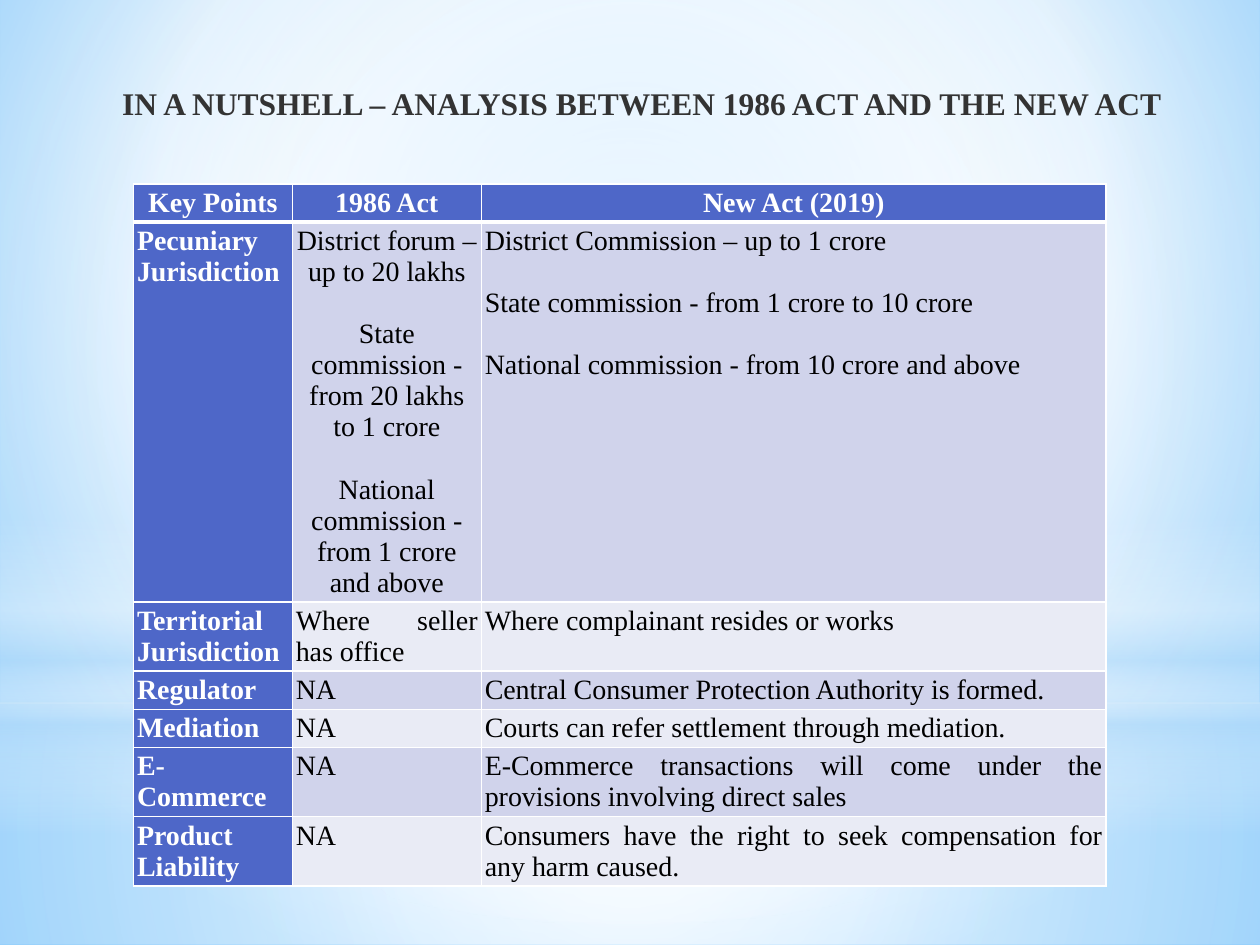
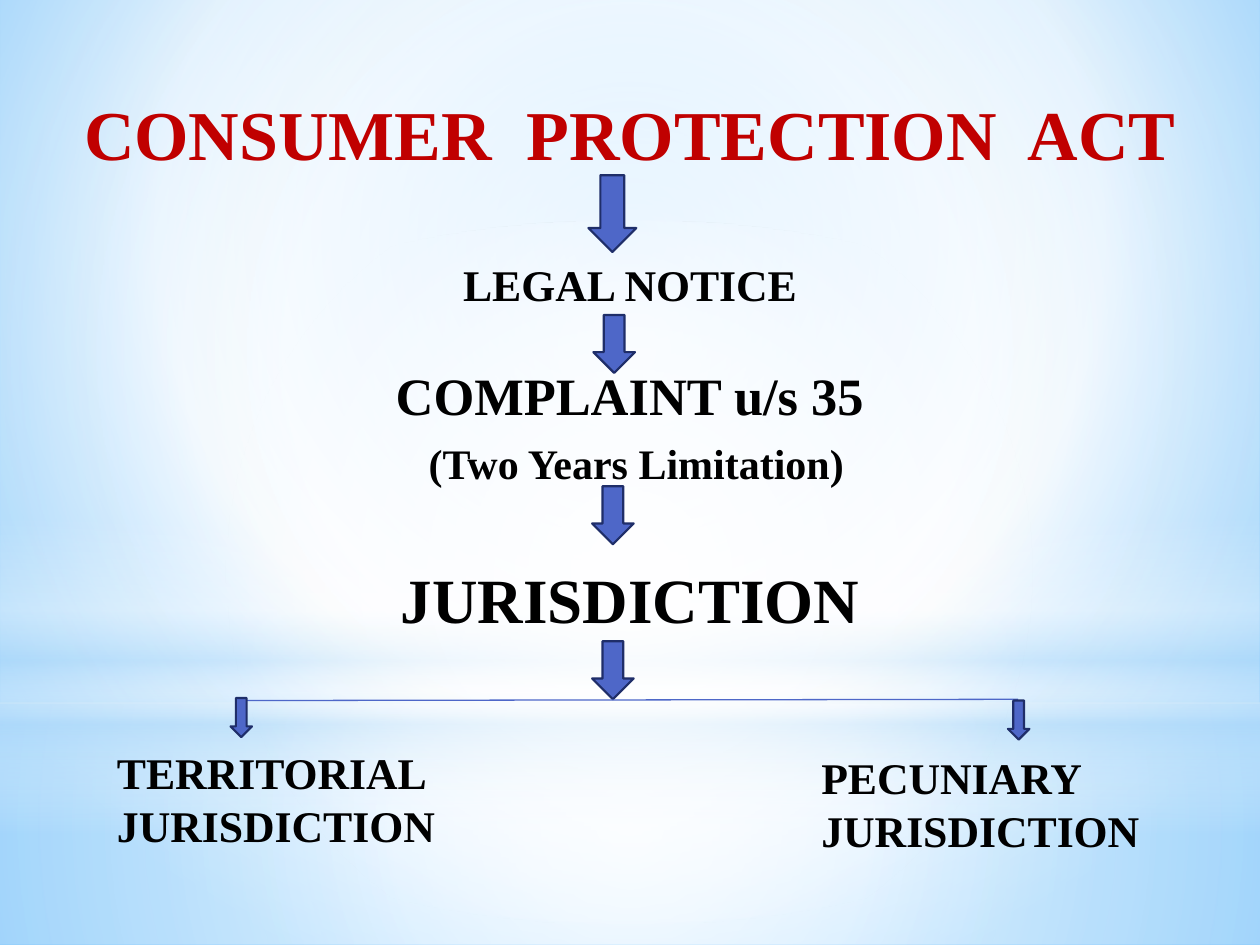
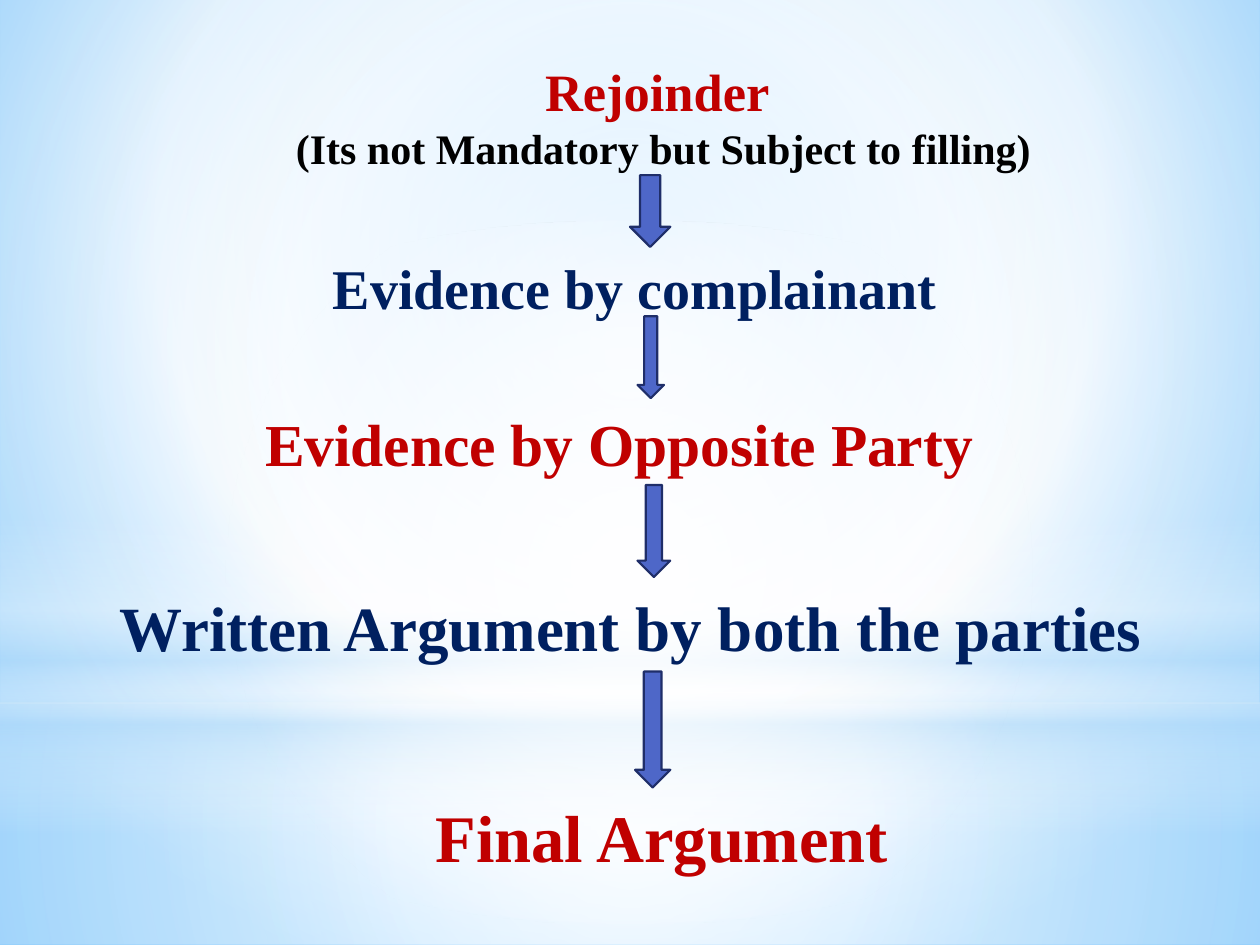
from lxml import etree
from pptx import Presentation
from pptx.dml.color import RGBColor
from pptx.enum.shapes import MSO_CONNECTOR, MSO_SHAPE
from pptx.enum.text import MSO_ANCHOR, MSO_AUTO_SIZE, PP_ALIGN
from pptx.oxml.ns import qn
from pptx.util import Inches, Pt

RECTANGLE, OVAL, DOWN_ARROW = MSO_SHAPE.RECTANGLE, MSO_SHAPE.OVAL, MSO_SHAPE.DOWN_ARROW
STRAIGHT = MSO_CONNECTOR.STRAIGHT
TOP, MIDDLE = MSO_ANCHOR.TOP, MSO_ANCHOR.MIDDLE
LEFT, CENTER, JUSTIFY = PP_ALIGN.LEFT, PP_ALIGN.CENTER, PP_ALIGN.JUSTIFY
NO_AUTOFIT = MSO_AUTO_SIZE.NONE

FONT = "Times New Roman"
BLACK = RGBColor(0x00, 0x00, 0x00)
WHITE = RGBColor(0xFF, 0xFF, 0xFF)
CHARCOAL = RGBColor(0x33, 0x33, 0x33)
RED = RGBColor(0xC0, 0x00, 0x00)
NAVY = RGBColor(0x00, 0x20, 0x60)
BLUE = RGBColor(0x4E, 0x67, 0xC8)
DARK_BLUE = RGBColor(0x1F, 0x2E, 0x69)
BAND_DARK = RGBColor(0xD0, 0xD3, 0xEB)
BAND_LIGHT = RGBColor(0xE9, 0xEB, 0xF5)
SKY = RGBColor(0x9E, 0xD5, 0xFF)
DEEP_SKY = RGBColor(0x5B, 0xB9, 0xFF)
PALE_SKY = RGBColor(0xB4, 0xDC, 0xFA)

# Gradient stops: position, colour, opacity (all in percent)
BACKGROUND_STOPS = [(0, SKY, 100), (60, WHITE, 100), (100, DEEP_SKY, 100)]
CENTRE = (50, 50, 50, 50)
BACKDROP = [
    (RECTANGLE, (0, 5.58, 10, 1.92), CENTRE,
     [(0, WHITE, 91), (37, WHITE, 76), (100, PALE_SKY, 79)]),
    (RECTANGLE, (0, 0, 10, 5.58), CENTRE,
     [(0, WHITE, 89), (48, WHITE, 62), (100, PALE_SKY, 79)]),
    (RECTANGLE, (0, 4.12, 10, 2.5), None,
     [(0, WHITE, 0), (29, WHITE, 30), (45, PALE_SKY, 40),
      (55, WHITE, 26), (65, PALE_SKY, 60), (100, WHITE, 0)]),
    (OVAL, (0, 1.75, 10, 5.58), CENTRE, [(0, WHITE, 100), (56, WHITE, 0)]),
]

COLUMN_WIDTHS = [1.26, 1.5, 4.96]
ROW_HEIGHTS = [0.29, 3.01, 0.54, 0.3, 0.3, 0.54, 0.54]
COMPARISON = [
    ["Key Points", "1986 Act", "New Act (2019)"],
    ["Pecuniary Jurisdiction",
     "District forum – up to 20 lakhs\n"
     "State commission - from 20 lakhs to 1 crore\n"
     "National commission - from 1 crore and above",
     "District Commission – up to 1 crore\n"
     "State commission - from 1 crore to 10 crore\n"
     "National commission - from 10 crore and above"],
    ["Territorial Jurisdiction", "Where seller has office",
     "Where complainant resides or works"],
    ["Regulator", "NA", "Central Consumer Protection Authority is formed."],
    ["Mediation", "NA", "Courts can refer settlement through mediation."],
    ["E-Commerce", "NA",
     "E-Commerce transactions will come under the provisions involving direct sales"],
    ["Product Liability", "NA",
     "Consumers have the right to seek compensation for any harm caused."],
]


def inches(box):
    return [Inches(value) for value in box]


# Shared look
def set_gradient(fill, holder, stops, focus):
    """Give fill these stops, round a focus box or, without one, top to bottom."""
    fill.gradient()
    gradient = holder.find(".//" + qn("a:gradFill"))
    for child in list(gradient):
        gradient.remove(child)
    stop_list = etree.SubElement(gradient, qn("a:gsLst"))
    for position, color, opacity in stops:
        stop = etree.SubElement(stop_list, qn("a:gs"), pos=str(position * 1000))
        tint = etree.SubElement(stop, qn("a:srgbClr"), val=str(color))
        if opacity < 100:
            etree.SubElement(tint, qn("a:alpha"), val=str(opacity * 1000))
    if focus:
        circle = etree.SubElement(gradient, qn("a:path"), path="circle")
        sides = {side: str(share * 1000) for side, share in zip("ltrb", focus)}
        etree.SubElement(circle, qn("a:fillToRect"), **sides)
    else:
        etree.SubElement(gradient, qn("a:lin"), ang="5400000", scaled="0")


def build_master(master, page):
    """Draw the backdrop on a page and move it to the back of the master."""
    set_gradient(master.background.fill, master.element, BACKGROUND_STOPS, (20, 10, 20, 60))
    for index, (kind, box, focus, stops) in enumerate(BACKDROP):
        glow = page.shapes.add_shape(kind, *inches(box))
        glow.shadow.inherit = False
        glow.line.fill.background()
        set_gradient(glow.fill, glow._element, stops, focus)
        glow._element.nvSpPr.cNvPr.set("id", str(100 + index))
        master.shapes._spTree.insert(2 + index, glow._element)


def write(frame, lines, align=CENTER, gap=0, bold=True):
    """Write (text, size, color) lines, with a gap in points between them."""
    for index, (text, size, color) in enumerate(lines):
        para = frame.add_paragraph() if index else frame.paragraphs[0]
        look = {"alignment": align, "line_spacing": 1.0,
                "space_before": Pt(gap if index else 0)}
        for name, value in look.items():
            setattr(para, name, value)
        span = para.add_run()
        span.text = text
        span.font.color.rgb = color
        for name, value in {"name": FONT, "size": Pt(size), "bold": bold}.items():
            setattr(span.font, name, value)


def add_title(page, box, lines, anchor=TOP, wrap=True):
    title = page.shapes.title
    for name, value in zip(("left", "top", "width", "height"), inches(box)):
        setattr(title, name, value)
    frame = title.text_frame
    for name, value in {"auto_size": NO_AUTOFIT, "vertical_anchor": anchor,
                        "word_wrap": wrap}.items():
        setattr(frame, name, value)
    write(frame, lines)


def add_label(page, box, text, size, color=BLACK, align=CENTER):
    frame = page.shapes.add_textbox(*inches(box)).text_frame
    frame.word_wrap = True
    write(frame, [(text, size, color)], align)


def add_arrow(page, box):
    arrow = page.shapes.add_shape(DOWN_ARROW, *inches(box))
    arrow.shadow.inherit = False
    arrow.fill.solid()
    arrow.fill.fore_color.rgb = BLUE
    arrow.line.color.rgb = DARK_BLUE
    arrow.line.width = Pt(1.25)


# Comparison table
def set_borders(cell, **widths):
    properties = cell._tc.get_or_add_tcPr()
    for index, side in enumerate("LRTB"):
        edge = etree.Element(qn("a:ln" + side), w=str(Pt(widths.get(side, 1))))
        paint = etree.SubElement(edge, qn("a:solidFill"))
        etree.SubElement(paint, qn("a:srgbClr"), val=str(WHITE))
        properties.insert(index, edge)


def add_comparison(page, left, top):
    box = (left, top, sum(COLUMN_WIDTHS), sum(ROW_HEIGHTS))
    table = page.shapes.add_table(len(ROW_HEIGHTS), len(COLUMN_WIDTHS), *inches(box)).table
    table.first_row = table.horz_banding = False
    for column, width in zip(table.columns, COLUMN_WIDTHS):
        column.width = Inches(width)
    for row, height in zip(table.rows, ROW_HEIGHTS):
        row.height = Inches(height)
    for r, texts in enumerate(COMPARISON):
        for c, text in enumerate(texts):
            cell = table.cell(r, c)
            for side in ("left", "top", "right", "bottom"):
                setattr(cell, "margin_" + side, Pt(2))
            heading = r == 0 or c == 0
            cell.fill.solid()
            cell.fill.fore_color.rgb = BLUE if heading else BAND_DARK if r % 2 else BAND_LIGHT
            set_borders(cell, T=3 if r == 1 else 1, B=3 if r == 0 else 1)
            centred = r == 0 or (r, c) == (1, 1)
            lines = [(part, 16, WHITE if heading else BLACK) for part in text.split("\n")]
            write(cell.text_frame, lines, CENTER if centred else JUSTIFY, 17.7, heading)


# Slides
def build_comparison(page):
    add_title(page, (0.83, 0.62, 8.53, 0.4),
              [("IN A NUTSHELL – ANALYSIS BETWEEN 1986 ACT AND THE NEW ACT", 18, CHARCOAL)],
              MIDDLE, False)
    add_comparison(page, 1.06, 1.46)


def build_jurisdiction(page):
    add_title(page, (0.25, 0.67, 9.5, 0.74), [("CONSUMER  PROTECTION  ACT", 40, RED)])
    steps = [("LEGAL NOTICE", 25, 0.25, 2), ("COMPLAINT u/s 35", 30, 0.25, 2.83),
             ("(Two Years Limitation)", 24, 0.3, 3.42), ("JURISDICTION", 36, 0.25, 4.4)]
    for text, size, left, top in steps:
        add_label(page, (left, top, 9.5, 0.1 + size / 60), text, size)
    for box in [(4.67, 1.39, 0.38, 0.61), (4.71, 2.5, 0.33, 0.46),
                (4.7, 3.86, 0.33, 0.46), (4.7, 5.09, 0.33, 0.46)]:
        add_arrow(page, box)

    # Fork into the two kinds of jurisdiction
    fork = page.shapes.add_connector(STRAIGHT, *inches((1.92, 5.56, 8.08, 5.55)))
    fork.line.color.rgb = BLUE
    fork.line.width = Pt(0.75)
    etree.SubElement(fork._element.spPr, qn("a:effectLst"))
    branches = [("TERRITORIAL JURISDICTION", (0.83, 5.87, 3.17, 0.94), (1.83, 5.54)),
                ("PECUNIARY JURISDICTION", (6.42, 5.91, 2.75, 0.94), (8, 5.56))]
    for text, box, corner in branches:
        add_arrow(page, (*corner, 0.17, 0.31))
        add_label(page, box, text, 25, align=LEFT)


def build_evidence(page):
    add_title(page, (2.2, 0.42, 6.13, 1.01),
              [("Rejoinder ", 30, RED),
               ("(Its not Mandatory but Subject to filling)", 24, BLACK)])
    steps = [("Evidence by complainant", 32, NAVY, (2, 1.96, 6.08, 0.64)),
             ("Evidence by Opposite Party", 34, RED, (1.33, 3.18, 7.17, 0.67)),
             ("Written Argument by both the parties", 36, NAVY, (0.67, 4.62, 8.67, 0.71)),
             ("Final Argument", 38, RED, (2.38, 6.27, 5.75, 0.74))]
    for text, size, color, box in steps:
        add_label(page, box, text, size, color)
    for box in [(5, 1.39, 0.32, 0.57), (5.06, 2.51, 0.21, 0.65),
                (5.06, 3.85, 0.26, 0.73), (5.04, 5.33, 0.28, 0.92)]:
        add_arrow(page, box)


def main():
    deck = Presentation()
    deck.slide_width, deck.slide_height = Inches(10), Inches(7.5)
    title_only = deck.slide_layouts[5]
    builders = [build_comparison, build_jurisdiction, build_evidence]
    pages = [deck.slides.add_slide(title_only) for _ in builders]
    build_master(deck.slide_master, pages[0])
    for build, page in zip(builders, pages):
        build(page)
    deck.save("out.pptx")


if __name__ == "__main__":
    main()
